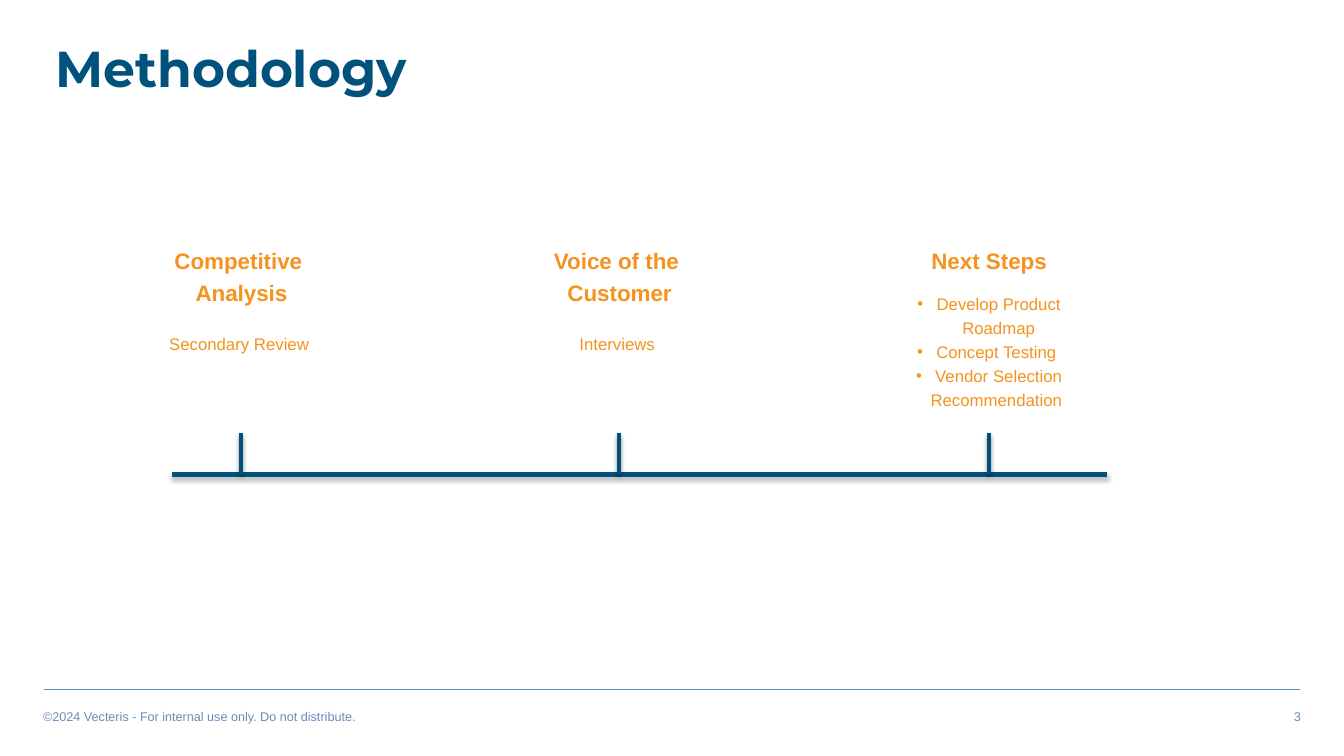
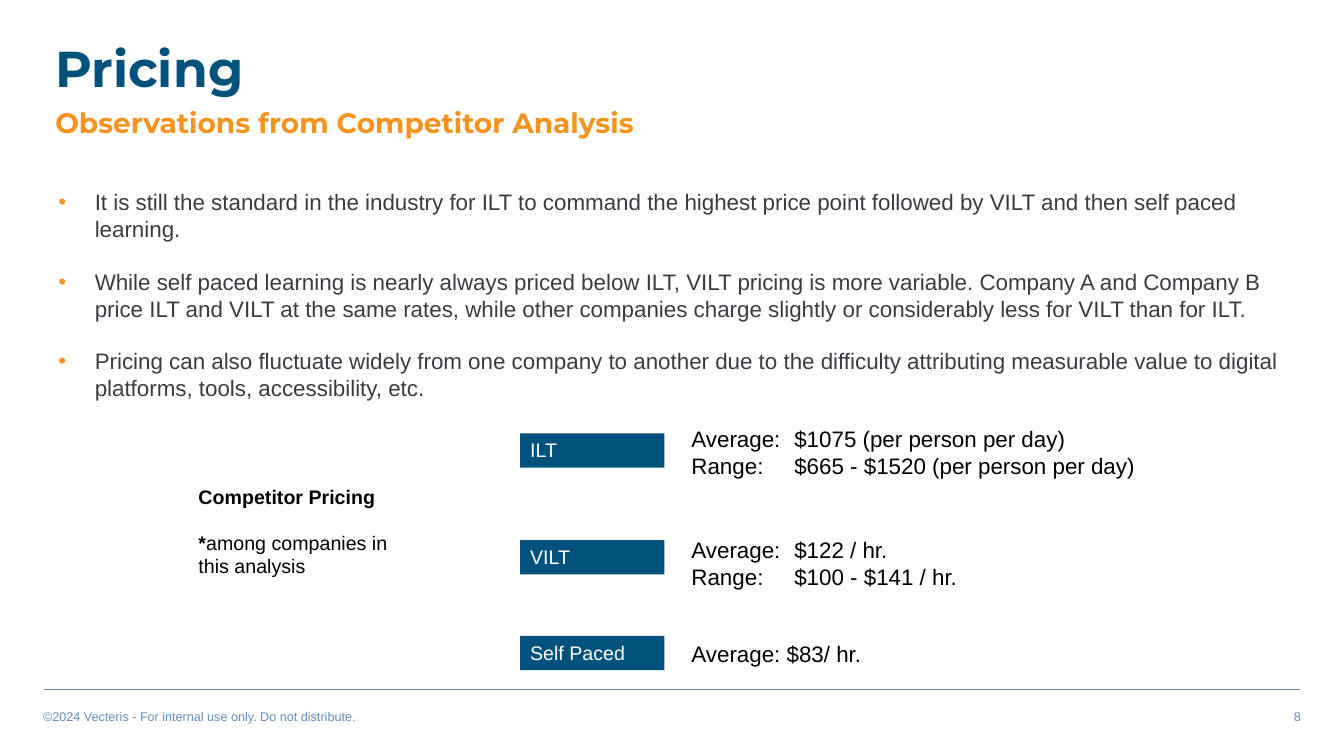
import pptx
import pptx.util
import pptx.dml.color
import pptx.enum.shapes
import pptx.enum.text
import pptx.oxml.ns
from lxml import etree

COLORS = {"navy": "00517C", "orange": "F6921E", "blue": "668EB9",
          "gray": "393C42", "black": "000000", "white": "FFFFFF"}
EMU_PER_PX = 9144  # 100 px to the inch
PAD = (10, 5, 10, 5)
FLUSH = (0, 0, 0, 0)
ALIGN = pptx.enum.text.PP_ALIGN
ANCHOR = pptx.enum.text.MSO_ANCHOR


def px(n):
    return pptx.util.Emu(n * EMU_PER_PX)


def rgb(name):
    return pptx.dml.color.RGBColor.from_string(COLORS[name])


def sub(parent, tag, **attrs):
    el = etree.SubElement(parent, pptx.oxml.ns.qn(tag))
    for key, value in attrs.items():
        el.set(key, str(value))
    return el


class Deck:
    """Holds the shared style and the current slide."""

    def __init__(self):
        self.prs = pptx.Presentation()
        self.prs.slide_width, self.prs.slide_height = px(1333), px(750)
        self.s = None

    def slide(self, title, number, subtitle=None):
        self.s = self.prs.slides.add_slide(self.prs.slide_layouts[6])
        # Footer
        self.line(44, 684, 1289, 684, "blue", 1)
        footer = {"size": 9, "color": "blue"}
        self.text((33, 698, 533, 25),
                  ["©2024 Vecteris - For internal use only. Do not distribute."], **footer)
        self.text((767, 698, 533, 25), [str(number)], align=ALIGN.RIGHT, **footer)
        # Headings
        heading = {"font": "Montserrat", "bold": True, "spacing": 0.9, "anchor": ANCHOR.MIDDLE}
        self.text((45, 33, 962, 76), [title], size=36, color="navy", **heading)
        if subtitle:
            self.text((45, 101, 1238, 45), [subtitle], size=20, color="orange", **heading)

    def line(self, x1, y1, x2, y2, color, width, shadow=False):
        c = self.s.shapes.add_connector(pptx.enum.shapes.MSO_CONNECTOR.STRAIGHT,
                                        px(x1), px(y1), px(x2), px(y2))
        c.line.color.rgb = rgb(color)
        c.line.width = pptx.util.Pt(width)
        effects = sub(c._element.spPr, "a:effectLst")
        if shadow:
            shade = sub(effects, "a:outerShdw", blurRad=39370, dist=20320,
                        dir=5400000, rotWithShape=0)
            sub(sub(shade, "a:srgbClr", val=COLORS["black"]), "a:alpha", val=38000)

    def text(self, box, paras, **style):
        sp = self.s.shapes.add_textbox(*map(px, box))
        self.fill_text(sp.text_frame, paras, **style)

    def label(self, box, words):
        sp = self.s.shapes.add_shape(pptx.enum.shapes.MSO_SHAPE.RECTANGLE, *map(px, box))
        sp.shadow.inherit = False
        sp.fill.solid()
        sp.fill.fore_color.rgb = rgb("navy")
        sp.line.fill.background()
        self.fill_text(sp.text_frame, [words], size=14, color="white")

    def fill_text(self, tf, paras, insets=PAD, anchor=ANCHOR.TOP, **style):
        """Each paragraph is a string or a dict of text and its own style."""
        frame = dict(zip(("margin_left", "margin_top", "margin_right", "margin_bottom"),
                         map(px, insets)))
        frame.update(word_wrap=True, vertical_anchor=anchor)
        for key, value in frame.items():
            setattr(tf, key, value)
        for i, para in enumerate(paras):
            p = tf.add_paragraph() if i else tf.paragraphs[0]
            para = para if isinstance(para, dict) else {"text": para}
            self.paragraph(p, **{**style, **para})

    def paragraph(self, p, text, size, color, font="Arial", bold=False, lead="",
                  align=ALIGN.LEFT, spacing=1.0, before=0, bullet=None, tab=None):
        pPr = p._p.get_or_add_pPr()
        if bullet:
            margin, hang = bullet
            pPr.set("marL", str(px(margin)))
            pPr.set("indent", str(-px(hang)))
            sub(sub(pPr, "a:buClr"), "a:srgbClr", val=COLORS["orange"])
            sub(pPr, "a:buFont", typeface="Arial")
            sub(pPr, "a:buChar", char="•")
        if tab:
            sub(sub(pPr, "a:tabLst"), "a:tab", pos=px(tab), algn="l")
        form = {"alignment": align, "line_spacing": spacing,
                "space_before": pptx.util.Pt(before)}
        for key, value in form.items():
            setattr(p, key, value)
        # A lead is a bold opening run
        for words, heavy in ((lead, True), (text, bold)):
            if words:
                r = p.add_run()
                r.text = words
                look = {"name": font, "size": pptx.util.Pt(size), "bold": heavy}
                for key, value in look.items():
                    setattr(r.font, key, value)
                r.font.color.rgb = rgb(color)


def methodology(deck):
    deck.slide("Methodology", 3)
    # Each step: tick position, text width, heading lines, gap, details, bullet
    steps = [
        (239, 169, ["Competitive ", "Analysis"], 16.5, ["Secondary Review "], None),
        (614, 169, ["Voice of the ", "Customer"], 16.5, ["Interviews "], None),
        (981, 212, ["Next Steps"], 11,
         ["Develop Product Roadmap", "Concept Testing ", "Vendor Selection Recommendation "],
         (19, 19)),
    ]
    for x, width, heading, gap, details, bullet in steps:
        paras = [{"text": t, "size": 16, "bold": True} for t in heading]
        paras += [{"text": t, "size": 12, "bullet": bullet, "before": 0 if i else gap}
                  for i, t in enumerate(details)]
        deck.text((x - width // 2, 240, width, 100), paras, insets=FLUSH,
                  color="orange", align=ALIGN.CENTER, spacing=1.2)
    # Timeline
    deck.line(171, 471, 1098, 471, "navy", 3.25, shadow=True)
    for x, *_ in steps:
        deck.line(x, 430, x, 470, "navy", 3.25, shadow=True)


def pricing(deck):
    deck.slide("Pricing", 8, "Observations from Competitor Analysis")
    # Observations
    points = [
        "It is still the standard in the industry for ILT to command the highest price point "
        "followed by VILT and then self paced learning.",
        "While self paced learning is nearly always priced below ILT, VILT pricing is more "
        "variable. Company A and Company B price ILT and VILT at the same rates, while other "
        "companies charge slightly or considerably less for VILT than for ILT.",
        "Pricing can also fluctuate widely from one company to another due to the difficulty "
        "attributing measurable value to digital platforms, tools, accessibility, etc.",
    ]
    deck.text((56, 187, 1215, 277),
              [{"text": t, "before": 18.4 if i else 0} for i, t in enumerate(points)],
              insets=FLUSH, size=16, color="gray", bullet=(38, 36))
    # Rates: label, label top, text top, lines
    rates = [
        ("ILT", 430, 417, ["Average:\t$1075 (per person per day)",
                           "Range:\t$665 - $1520 (per person per day)"]),
        ("VILT", 536, 527, ["Average:\t$122 / hr.", "Range:\t$100 - $141 / hr."]),
        ("Self Paced", 631, 630, ["Average: $83/ hr."]),
    ]
    for name, label_top, text_top, lines in rates:
        deck.label((516, label_top, 143, 34), name)
        deck.text((676, text_top, 550, 10 + 27 * len(lines)), lines,
                  size=16, color="black", tab=102)
    # Note on the rates
    deck.text((187, 476, 228, 104),
              [{"text": "Competitor Pricing", "bold": True},
               {"text": "among companies in this analysis", "lead": "*", "before": 16}],
              size=14, color="black")


def main():
    deck = Deck()
    methodology(deck)
    pricing(deck)
    deck.prs.save("out.pptx")


if __name__ == "__main__":
    main()
